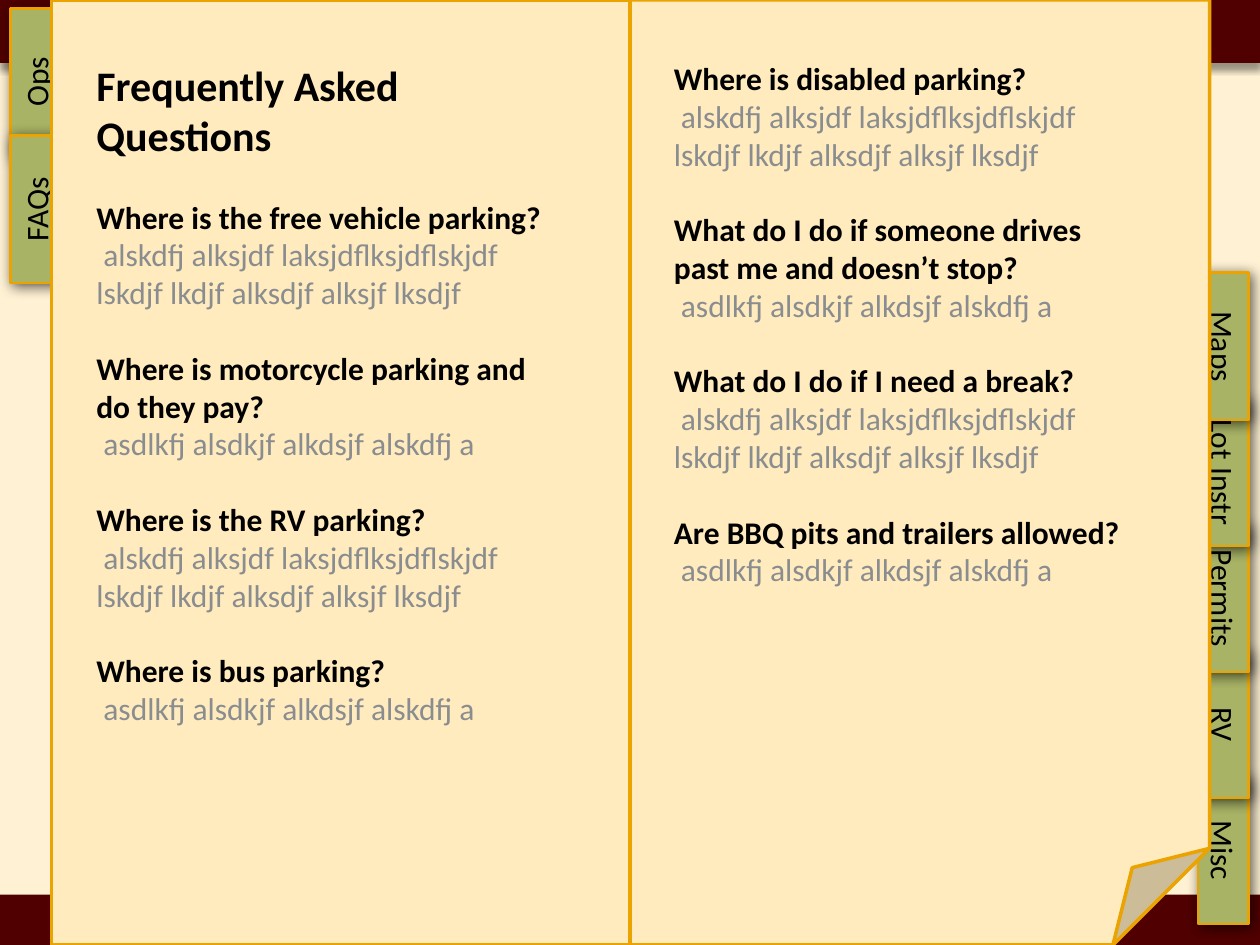
from lxml.etree import SubElement as Sub
from pptx import Presentation
from pptx.dml.color import RGBColor as RGB
from pptx.enum.shapes import MSO_SHAPE as SHP
from pptx.enum.text import MSO_ANCHOR as ANC, PP_ALIGN as ALN
from pptx.oxml.ns import qn
from pptx.util import Pt

CREAM = RGB(0xFF, 0xF2, 0xD4)
PAGE = RGB(0xFF, 0xEB, 0xBD)
WINE = RGB(0x50, 0x00, 0x00)
GREEN = RGB(0xA8, 0xB3, 0x65)
GOLD = RGB(0xEA, 0xA3, 0x00)
BLACK = RGB(0x00, 0x00, 0x00)
GREY = RGB(0x8A, 0x8D, 0x90)

WIDE, HIGH = 720, 540
LONG = "alskdfj alksjdf laksjdflksjdflskjdf lskdjf lkdjf alksdjf alksjf lksdjf"
SHORT = "asdlkfj alsdkjf alkdsjf alskdfj a"
LEFT = [
    ("Where is the free vehicle parking?", LONG),
    ("Where is motorcycle parking and do they pay?", SHORT),
    ("Where is the RV parking?", LONG),
    ("Where is bus parking?", SHORT),
]
RIGHT = [
    ("Where is disabled parking?", LONG),
    ("What do I do if someone drives past me and doesn’t stop?", SHORT),
    ("What do I do if I need a break?", LONG),
    ("Are BBQ pits and trailers allowed?", SHORT),
]


def write(frame, text, size=18, color=BLACK, bold=False, align=ALN.LEFT,
          gap=0, indent=0):
    """Add one paragraph, using the empty first one if there is one."""
    first = frame.paragraphs[0]
    para = frame.add_paragraph() if first.runs else first
    para.alignment = align
    para.space_before = Pt(gap)
    if indent:
        para._p.get_or_add_pPr().set("indent", str(Pt(indent)))
    run = para.add_run()
    run.text = text
    font = run.font
    font.name, font.size, font.bold = "Calibri", Pt(size), bold
    font.color.rgb = color


def shade(shape, alpha, blur, dist, angle):
    """Give a shape an outer shadow."""
    fx = shape._element.spPr.find(qn("a:effectLst"))
    glow = Sub(fx, qn("a:outerShdw"), blurRad=str(Pt(blur)),
               dist=str(Pt(dist)), dir=str(angle * 60000), rotWithShape="0")
    tone = Sub(glow, qn("a:srgbClr"), val=str(BLACK))
    Sub(tone, qn("a:alpha"), val=str(alpha * 1000))


def block(slide, box, fill, line=0, kind=SHP.RECTANGLE):
    shape = slide.shapes.add_shape(kind, *map(Pt, box))
    shape.shadow.inherit = False
    shape.fill.solid()
    shape.fill.fore_color.rgb = fill
    if line:
        shape.line.color.rgb = GOLD
        shape.line.width = Pt(line)
    else:
        shape.line.fill.background()
    return shape


def tab(slide, box, name, turn):
    """Index tab: box is the upright area that the turned shape covers."""
    x, y, w, h = box
    flat = (x + (w - h) / 2, y + (h - w) / 2, h, w)
    shape = block(slide, flat, GREEN, line=1.5)
    shape.rotation = turn
    shade(shape, 64, 8, 2, 45)
    frame = shape.text_frame
    frame.word_wrap = True
    frame.vertical_anchor = ANC.TOP
    write(frame, name, align=ALN.CENTER)


def page(slide, box, kind):
    block(slide, box, PAGE, line=2, kind=kind)


def faq(slide, box, pairs, title=None):
    """Column of questions, each with its answer below."""
    frame = slide.shapes.add_textbox(*map(Pt, box)).text_frame
    frame.word_wrap = True
    if title:
        write(frame, title, size=24, bold=True)
    for i, (ask, reply) in enumerate(pairs):
        write(frame, ask, bold=True, gap=21.6 if i or title else 0)
        write(frame, reply, color=GREY, indent=4)


def build():
    prs = Presentation()
    prs.slide_width, prs.slide_height = Pt(WIDE), Pt(HIGH)
    slide = prs.slides.add_slide(prs.slide_layouts[6])
    back = slide.background.fill
    back.solid()
    back.fore_color.rgb = CREAM

    # Bands at top and bottom
    shade(block(slide, (0, 0, WIDE, 36), WINE), 40, 4, 3, 90)
    block(slide, (0, 511.2, WIDE, 28.8), WINE)

    # Index tabs, the right side stacked from the bottom up
    tall, thick = 84.24, 28.8
    for i, name in enumerate(["Ops", "FAQs"]):
        tab(slide, (6.12, 4.68 + 72.72 * i, thick, tall), name, 270)
    names = ["Misc", "RV", "Permits", "Lot Instr", "Maps"]
    for i, name in enumerate(names):
        tab(slide, (684.6, 443.88 - 72 * i, thick, tall), name, 90)

    # Open book
    page(slide, (360, 0, 331.2, HIGH), SHP.FOLDED_CORNER)
    page(slide, (29.52, 0, 330.48, HIGH), SHP.RECTANGLE)

    # Questions and answers
    faq(slide, (48, 30.24, 276, 414.72), LEFT, "Frequently Asked Questions")
    faq(slide, (378, 30.24, 276, 334.08), RIGHT)

    prs.save("out.pptx")


if __name__ == "__main__":
    build()
